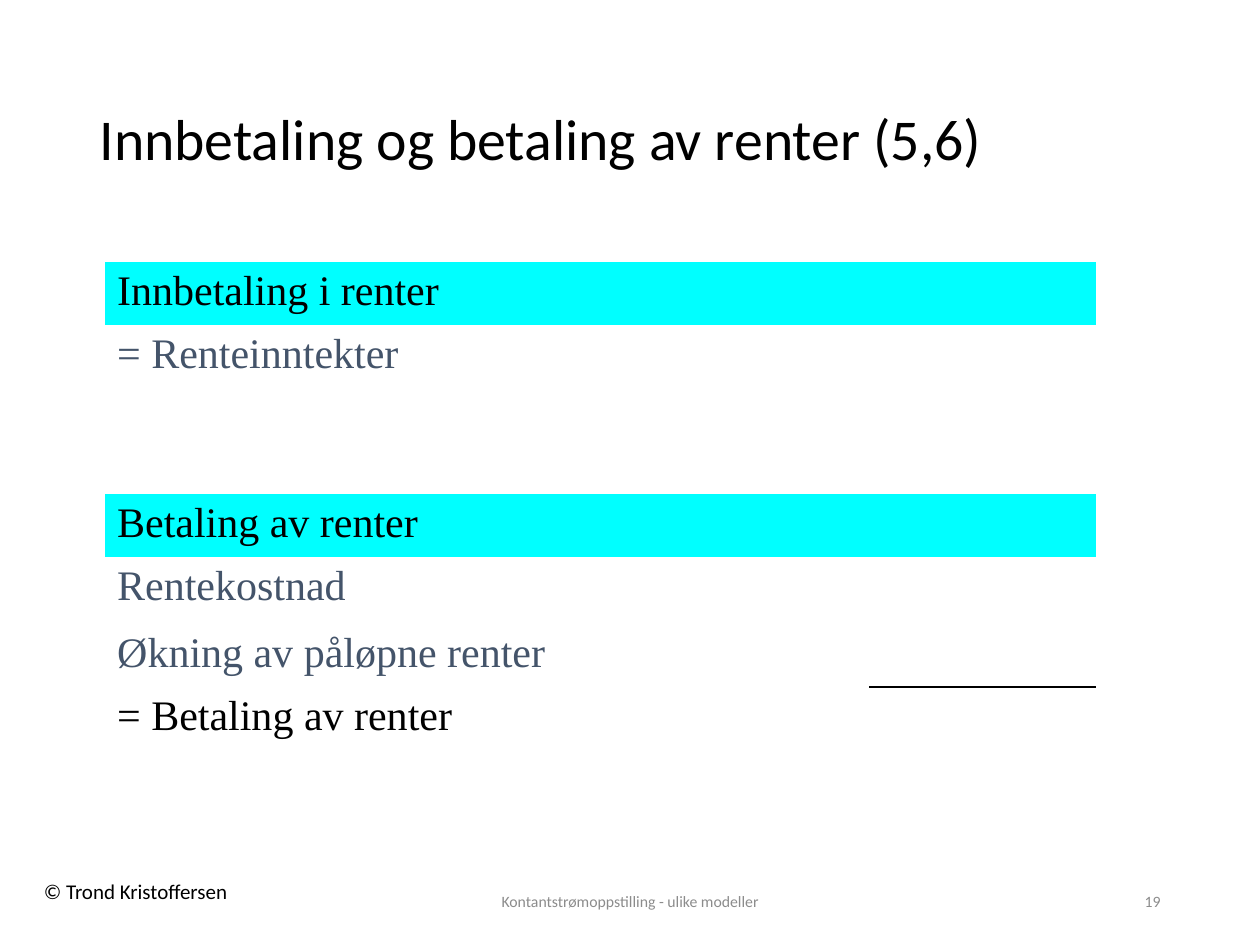
from lxml import etree
from pptx import Presentation
from pptx import util as u
from pptx.dml import color
from pptx.enum import text
from pptx.oxml import ns

BLACK, SLATE, GREY, CYAN = "000000", "44546A", "8C8C8C", "00FFFF"
NO_STYLE = "{2D5ABB26-0587-4C30-8999-92F81FD0307C}"


def rgb(value):
    return color.RGBColor.from_string(value)


def apply(target, values):
    for name, value in values.items():
        setattr(target, name, value)


class SlideBuilder:
    heading_font = "Calibri"
    table_font = "Times New Roman"
    columns = (5.83, 0.23, 1.8)

    def __init__(self, deck):
        self.page = deck.slides.add_slide(deck.slide_layouts[5])

    def add_words(self, frame, words, size, ink, font, align=text.PP_ALIGN.LEFT):
        para = frame.paragraphs[0]
        para.alignment = align
        span = para.add_run()
        span.text = words
        apply(span.font, {"name": font, "size": u.Pt(size), "bold": False})
        span.font.color.rgb = rgb(ink)
        return para

    def title(self, words, left, top, width, height):
        box = self.page.shapes.title
        apply(box, {"left": u.Inches(left), "top": u.Inches(top),
                    "width": u.Inches(width), "height": u.Inches(height)})
        apply(box.text_frame, {"vertical_anchor": text.MSO_ANCHOR.MIDDLE,
                               "auto_size": text.MSO_AUTO_SIZE.NONE})
        para = self.add_words(box.text_frame, words, 33, BLACK, self.heading_font)
        para.line_spacing = 0.9

    def label(self, words, left, top, width, height, size=9, ink=GREY,
              align=text.PP_ALIGN.LEFT, wrap=True, anchor=text.MSO_ANCHOR.MIDDLE):
        box = self.page.shapes.add_textbox(*map(u.Inches, (left, top, width, height)))
        apply(box.text_frame, {"word_wrap": wrap, "vertical_anchor": anchor})
        self.add_words(box.text_frame, words, size, ink, self.heading_font, align)

    def table(self, rows, left, top, heights):
        frame = self.page.shapes.add_table(
            len(rows), len(self.columns), u.Inches(left), u.Inches(top),
            u.Inches(sum(self.columns)), u.Inches(sum(heights)))
        grid = frame.table
        apply(grid, {"first_row": False, "horz_banding": False})
        grid._tbl.tblPr.find(ns.qn("a:tableStyleId")).text = NO_STYLE
        for column, width in zip(grid.columns, self.columns):
            column.width = u.Inches(width)
        for row, height, (words, ink) in zip(grid.rows, heights, rows):
            row.height = u.Inches(height)
            for cell in row.cells:
                cell.fill.background()
            self.add_words(row.cells[0].text_frame, words, 24, ink, self.table_font)
        header = grid.cell(0, 0)
        header.merge(grid.cell(0, len(self.columns) - 1))
        header.fill.solid()
        header.fill.fore_color.rgb = rgb(CYAN)
        return grid

    def bottom_border(self, cell, points, ink):
        properties = cell._tc.get_or_add_tcPr()
        line = etree.Element(ns.qn("a:lnB"), w=str(u.Pt(points)))
        fill = etree.SubElement(line, ns.qn("a:solidFill"))
        etree.SubElement(fill, ns.qn("a:srgbClr"), val=ink)
        properties.insert(0, line)


def main():
    deck = Presentation()
    apply(deck, {"slide_width": u.Inches(10), "slide_height": u.Inches(7.5)})
    builder = SlideBuilder(deck)

    builder.label("© Trond Kristoffersen", 0.25, 6.92, 1.7, 0.3, size=12, ink=BLACK,
                  wrap=False, anchor=text.MSO_ANCHOR.TOP)
    builder.title("Innbetaling og betaling av renter (5,6)", 0.69, 0.4, 8.62, 1.45)
    builder.label("Kontantstrømoppstilling - ulike modeller", 3.31, 6.95, 3.38, 0.4,
                  align=text.PP_ALIGN.CENTER)
    builder.label("19", 7.06, 6.95, 2.25, 0.4, align=text.PP_ALIGN.RIGHT)

    payments = builder.table(
        [("Betaling av renter", BLACK), ("Rentekostnad", SLATE),
         ("Økning av påløpne renter", SLATE), ("= Betaling av renter", BLACK)],
        0.83, 3.92, (0.47, 0.53, 0.47, 0.47))
    builder.bottom_border(payments.cell(2, 2), 1, BLACK)
    builder.table([("Innbetaling i renter", BLACK), ("= Renteinntekter", SLATE)],
                  0.83, 2.08, (0.47, 0.53))
    deck.save("out.pptx")


if __name__ == "__main__":
    main()
